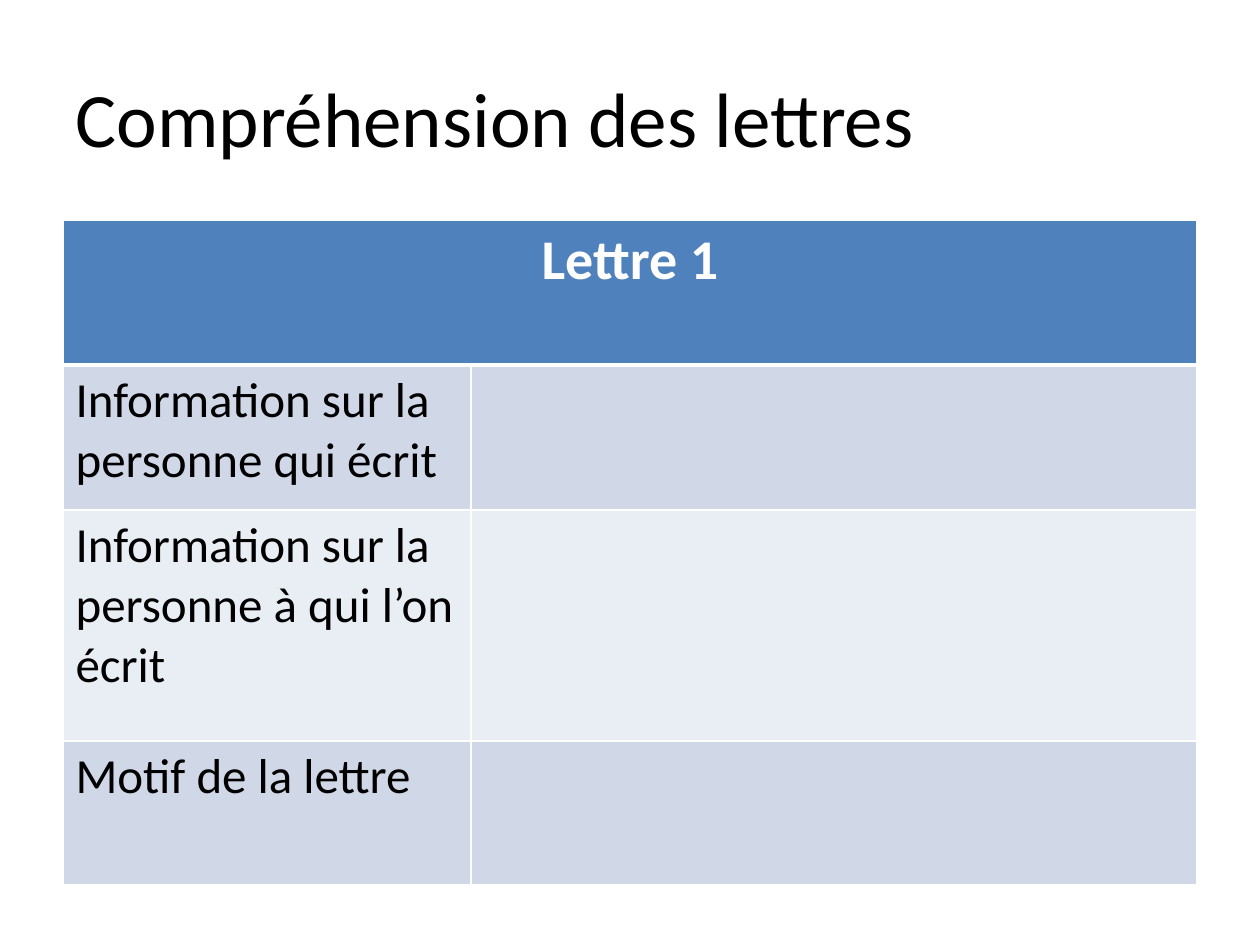
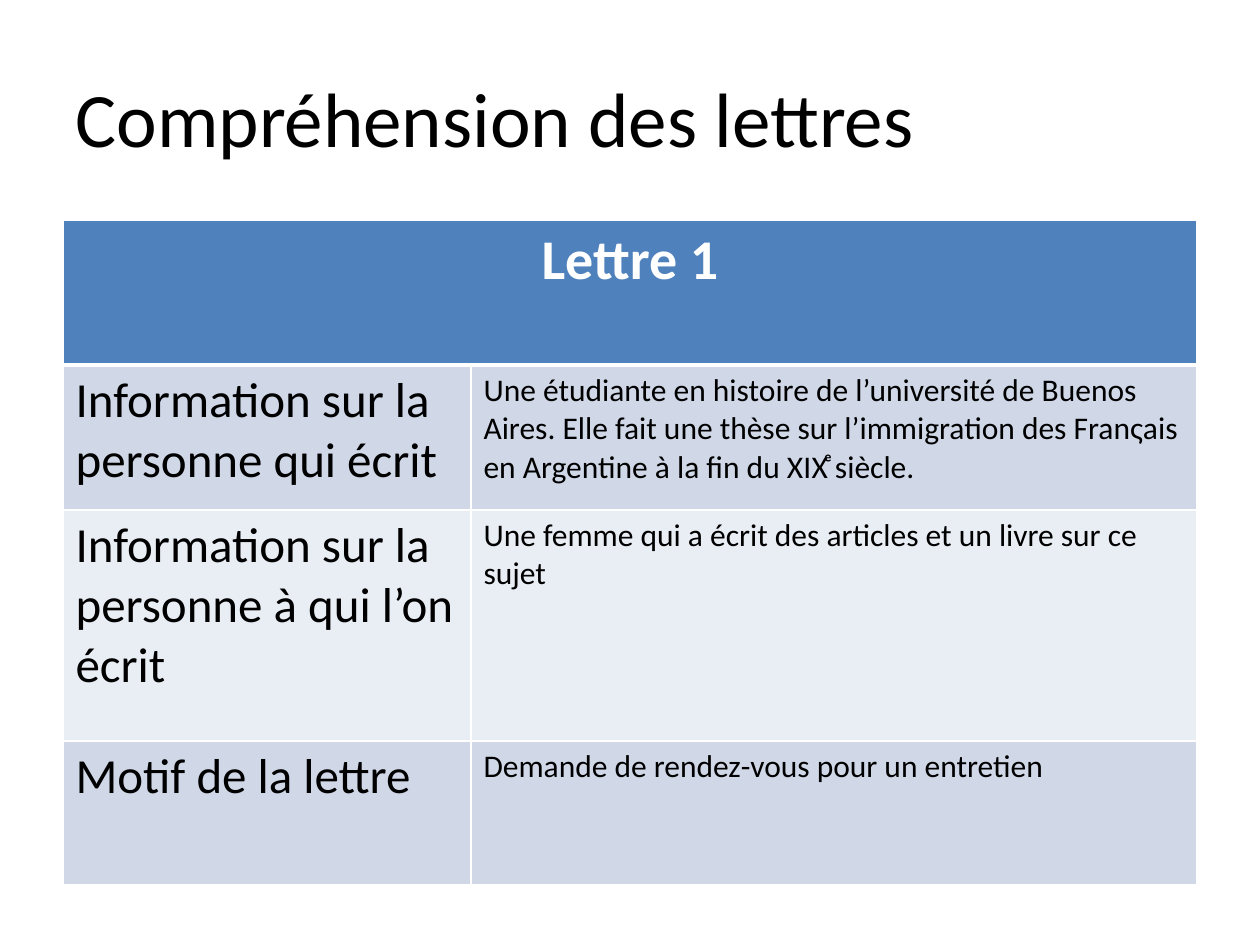
import pptx
import pptx.dml.color
import pptx.enum.text
import pptx.oxml
import pptx.oxml.ns
import pptx.util

RGB = pptx.dml.color.RGBColor
WHITE = RGB(0xFF, 0xFF, 0xFF)
BLACK = RGB(0, 0, 0)
BLUE = RGB(0x4F, 0x81, 0xBD)
BANDS = (RGB(0xD0, 0xD8, 0xE8), RGB(0xE9, 0xED, 0xF4))
FONT = "Calibri"
ALIGN = pptx.enum.text.PP_ALIGN

TITLE = "Compréhension des lettres"
HEAD = "Lettre 1"
LABELS = (
    "Information sur la personne qui écrit",
    "Information sur la personne à qui l’on écrit",
    "Motif de la lettre",
)
BLANKS = ("", "", "")
ANSWERS = (
    "Une étudiante en histoire de l’université de Buenos Aires. Elle fait une thèse "
    "sur l’immigration des Franςais en Argentine à la fin du XIXͤ siècle.",
    "Une femme qui a écrit des articles et un livre sur ce sujet",
    "Demande de rendez-vous pour un entretien",
)
WIDTHS = (408, 726)
HEIGHTS = (145, 145, 231, 144)


def px(count):
    return pptx.util.Inches(count / 126)


def write(frame, text, size, color, align=ALIGN.LEFT, bold=False):
    frame.text = text
    para = frame.paragraphs[0]
    para.alignment = align
    for run in para.runs:
        font = run.font
        font.name = FONT
        font.size = pptx.util.Pt(size)
        font.bold = bold
        font.color.rgb = color


def edge(cell, row):
    sides = {
        "lnL": 1,
        "lnR": 1,
        "lnT": 3 if row == 1 else 1,
        "lnB": 3 if row == 0 else 1,
    }
    props = cell._tc.get_or_add_tcPr()
    for spot, (side, points) in enumerate(sides.items()):
        line = pptx.oxml.parse_xml(
            f'<a:{side} {pptx.oxml.ns.nsdecls("a")} w="{pptx.util.Pt(points)}">'
            f'<a:solidFill><a:srgbClr val="{WHITE}"/></a:solidFill></a:{side}>'
        )
        props.insert(spot, line)


def paint(cell, row):
    cell.fill.solid()
    cell.fill.fore_color.rgb = BANDS[(row - 1) % 2] if row else BLUE
    edge(cell, row)


def add_title(slide):
    title = slide.shapes.title
    title.left, title.top = px(63), px(38)
    title.width, title.height = px(1134), px(157)
    title.text_frame.vertical_anchor = pptx.enum.text.MSO_ANCHOR.MIDDLE
    write(title.text_frame, TITLE, 44, BLACK)


def add_grid(slide, notes):
    frame = slide.shapes.add_table(
        len(HEIGHTS), len(WIDTHS), px(63), px(220), px(sum(WIDTHS)), px(sum(HEIGHTS))
    )
    grid = frame.table
    for column, width in zip(grid.columns, WIDTHS):
        column.width = px(width)
    for index, height in enumerate(HEIGHTS):
        grid.rows[index].height = px(height)
        for cell in grid.rows[index].cells:
            paint(cell, index)
    grid.cell(0, 0).merge(grid.cell(0, 1))
    write(grid.cell(0, 0).text_frame, HEAD, 32, WHITE, ALIGN.CENTER, True)
    for index, (label, note) in enumerate(zip(LABELS, notes), 1):
        write(grid.cell(index, 0).text_frame, label, 28, BLACK)
        if note:
            write(grid.cell(index, 1).text_frame, note, 18, BLACK)


def main():
    deck = pptx.Presentation()
    deck.slide_width, deck.slide_height = px(1260), px(945)
    for notes in (BLANKS, ANSWERS):
        slide = deck.slides.add_slide(deck.slide_layouts[5])
        add_title(slide)
        add_grid(slide, notes)
    deck.save("out.pptx")


if __name__ == "__main__":
    main()
